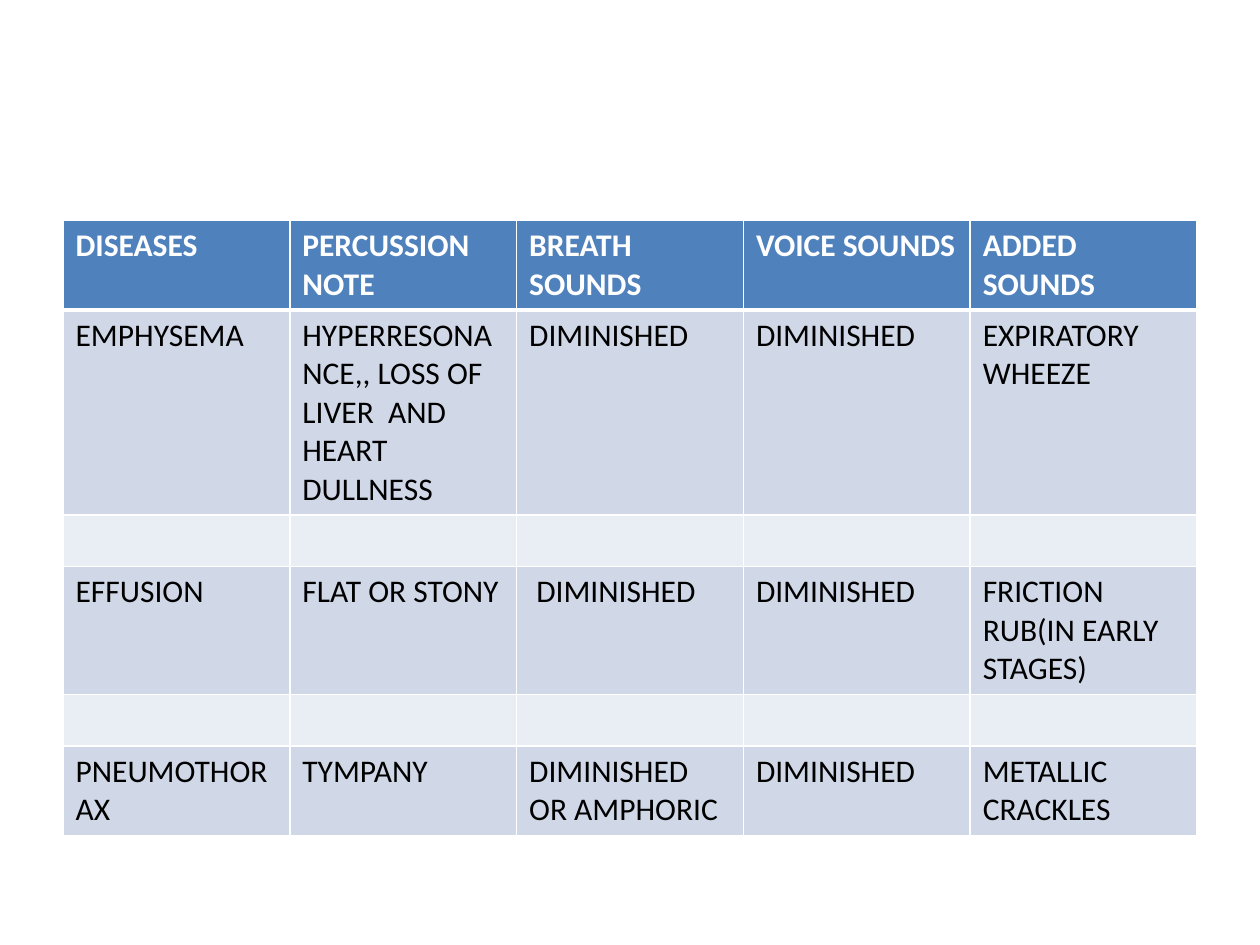
"""Build a slide with a table of chest signs in three lung diseases."""
from lxml.etree import SubElement
from pptx import Presentation
from pptx.dml.color import RGBColor
from pptx.oxml.ns import qn
from pptx.util import Inches, Pt

FONT, FONT_SIZE = "Calibri", 18
HEADER_FILL, BAND_FILLS = "4F81BD", ("E9EDF4", "D0D8E8")
WHITE, BLACK = "FFFFFF", "000000"
ROW_HEIGHT = 0.41

ROWS = [
    ["DISEASES", "PERCUSSION NOTE", "BREATH SOUNDS", "VOICE SOUNDS", "ADDED SOUNDS"],
    ["EMPHYSEMA", "HYPERRESONANCE,, LOSS OF LIVER  AND HEART DULLNESS",
     "DIMINISHED", "DIMINISHED", "EXPIRATORY WHEEZE"],
    [""] * 5,
    ["EFFUSION", "FLAT OR STONY", " DIMINISHED", "DIMINISHED",
     "FRICTION RUB(IN EARLY STAGES)"],
    [""] * 5,
    ["PNEUMOTHORAX", "TYMPANY", "DIMINISHED OR AMPHORIC", "DIMINISHED",
     "METALLIC CRACKLES"],
]


def paint(fill, color):
    fill.solid()
    fill.fore_color.rgb = RGBColor.from_string(color)


def add_border(cell, side, width):
    properties = cell._tc.get_or_add_tcPr()
    line = SubElement(properties, qn(f"a:ln{side}"), w=str(Pt(width)))
    solid = SubElement(line, qn("a:solidFill"))
    SubElement(solid, qn("a:srgbClr"), val=WHITE)


deck = Presentation()
deck.slide_width, deck.slide_height = Inches(10), Inches(7.5)
page = deck.slides.add_slide(deck.slide_layouts[6])

margin = deck.slide_width // 20
signs = page.shapes.add_table(
    len(ROWS), len(ROWS[0]), margin, Inches(1.75),
    deck.slide_width - 2 * margin, Inches(ROW_HEIGHT * len(ROWS)),
).table

for row_number, texts in enumerate(ROWS):
    is_header = row_number == 0
    for column_number, text in enumerate(texts):
        cell = signs.cell(row_number, column_number)
        for side in "LRTB":
            under_header = (row_number, side) in ((0, "B"), (1, "T"))
            add_border(cell, side, 3 if under_header else 1)
        paint(cell.fill, HEADER_FILL if is_header else BAND_FILLS[row_number % 2])
        if not text:
            continue
        cell.text_frame.text = text
        font = cell.text_frame.paragraphs[0].runs[0].font
        font.name, font.size, font.bold = FONT, Pt(FONT_SIZE), is_header
        paint(font.fill, WHITE if is_header else BLACK)

deck.save("out.pptx")
